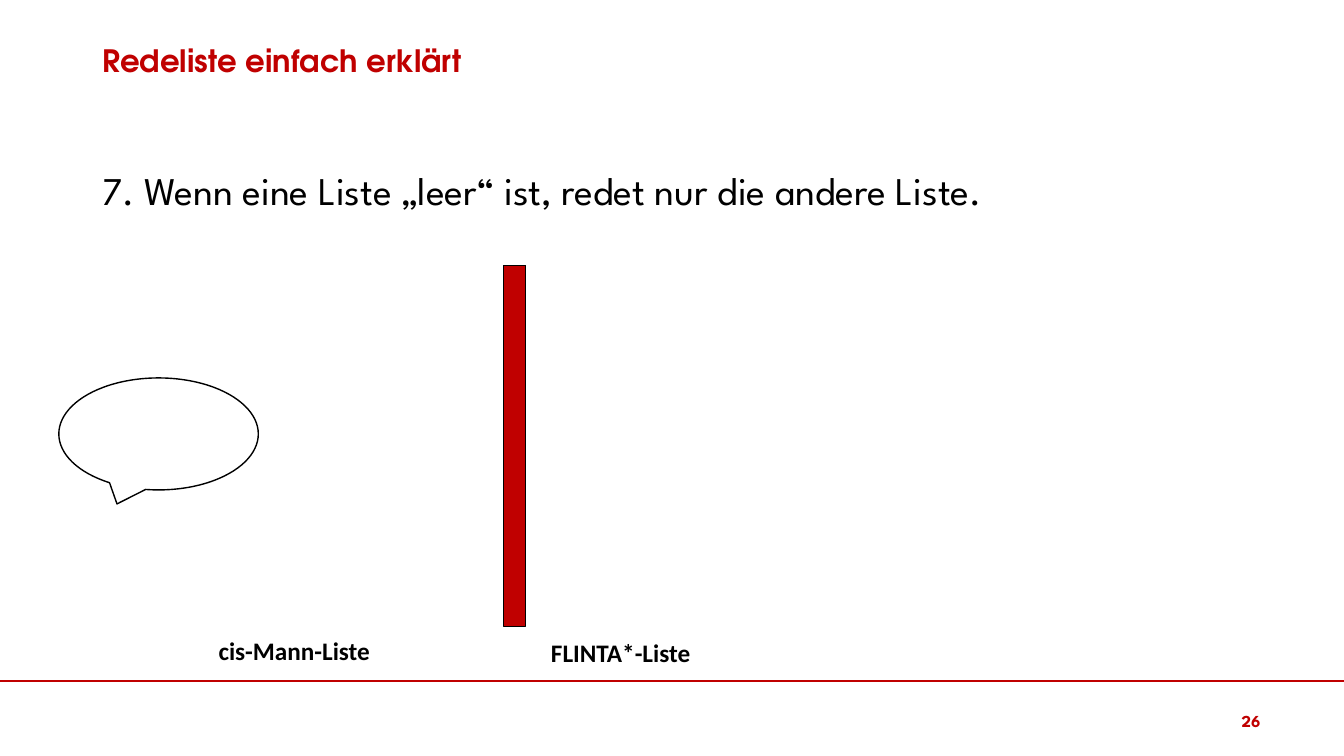
import pptx
import pptx.dml.color
import pptx.enum.shapes
import pptx.enum.text
import pptx.util
from lxml import etree
from pptx.oxml.ns import qn

Pt = pptx.util.Pt
PRESET = pptx.enum.shapes.MSO_SHAPE
ALIGN = pptx.enum.text.PP_ALIGN
ANCHOR = pptx.enum.text.MSO_ANCHOR


class Theme:
    red = pptx.dml.color.RGBColor(0xC0, 0x00, 0x00)
    black = pptx.dml.color.RGBColor(0x00, 0x00, 0x00)
    white = pptx.dml.color.RGBColor(0xFF, 0xFF, 0xFF)
    heading = {"name": "TeX Gyre Adventor", "size": Pt(22), "bold": True, "color": red}
    statement = {"name": "League Spartan", "size": Pt(28), "bold": False, "color": black}
    page_number = {"name": "League Spartan", "size": Pt(12), "bold": True, "color": red}
    list_label = {"name": "Calibri", "size": Pt(18), "bold": True, "color": black}
    outline = Pt(1)
    rule = Pt(1.5)


class SlideBuilder:
    def __init__(self, slide, theme):
        self.slide = slide
        self.theme = theme

    def fill_text(self, holder, text, style, align=ALIGN.LEFT, anchor=ANCHOR.TOP,
                  wrap=True, line_spacing=1.0):
        frame = holder.text_frame
        frame.text = text
        frame.word_wrap = wrap
        frame.vertical_anchor = anchor
        frame.auto_size = pptx.enum.text.MSO_AUTO_SIZE.NONE
        paragraph = frame.paragraphs[0]
        paragraph.alignment = align
        paragraph.line_spacing = line_spacing
        font = paragraph.runs[0].font
        for key, value in style.items():
            if key == "color":
                font.color.rgb = value
            else:
                setattr(font, key, value)

    def title(self, text, left, top, width, height):
        heading = self.slide.shapes.title
        place = {"left": left, "top": top, "width": width, "height": height}
        for side, length in place.items():
            setattr(heading, side, Pt(length))
        self.fill_text(heading, text, self.theme.heading, line_spacing=0.9)

    def text(self, text, left, top, width, height, style, **layout):
        box = self.slide.shapes.add_textbox(Pt(left), Pt(top), Pt(width), Pt(height))
        self.fill_text(box, text, style, **layout)

    def shape(self, preset, left, top, width, height, fill, rotation=0):
        figure = self.slide.shapes.add_shape(
            preset, Pt(left), Pt(top), Pt(width), Pt(height))
        figure.rotation = rotation
        figure.shadow.inherit = False
        figure.fill.solid()
        figure.fill.fore_color.rgb = fill
        figure.line.color.rgb = self.theme.black
        figure.line.width = self.theme.outline

    def horizontal_rule(self, top, width):
        rule = self.slide.shapes.add_connector(
            pptx.enum.shapes.MSO_CONNECTOR.STRAIGHT, 0, Pt(top), Pt(width), Pt(top))
        rule.line.color.rgb = self.theme.red
        rule.line.width = self.theme.rule
        etree.SubElement(rule._element.spPr, qn("a:effectLst"))


def main():
    deck = pptx.Presentation()
    deck.slide_width, deck.slide_height = Pt(960), Pt(540)
    title_only = deck.slide_layouts[5]
    theme = Theme()
    page = SlideBuilder(deck.slides.add_slide(title_only), theme)

    page.horizontal_rule(486.5, 960)
    page.title("Redeliste einfach erklärt", 66, 29.5, 828, 30)
    page.text("7. Wenn eine Liste „leer“ ist, redet nur die andere Liste.",
              66, 119, 828, 367, theme.statement, line_spacing=0.9)
    page.text("26", 865.5, 500.5, 42, 29, theme.page_number,
              align=ALIGN.RIGHT, anchor=ANCHOR.MIDDLE)

    # The divider between both lists is a minus sign turned upright.
    page.shape(PRESET.MATH_MINUS, 192, 285, 351, 67, theme.red, rotation=90)
    list_labels = [("FLINTA*-Liste", 386.5, 451.5, 119),
                   ("cis-Mann-Liste", 149, 450, 123)]
    for label, left, top, width in list_labels:
        page.text(label, left, top, width, 29, theme.list_label, wrap=False)
    page.shape(PRESET.OVAL_CALLOUT, 42, 270, 142.5, 80, theme.white)

    deck.save("out.pptx")


if __name__ == "__main__":
    main()
